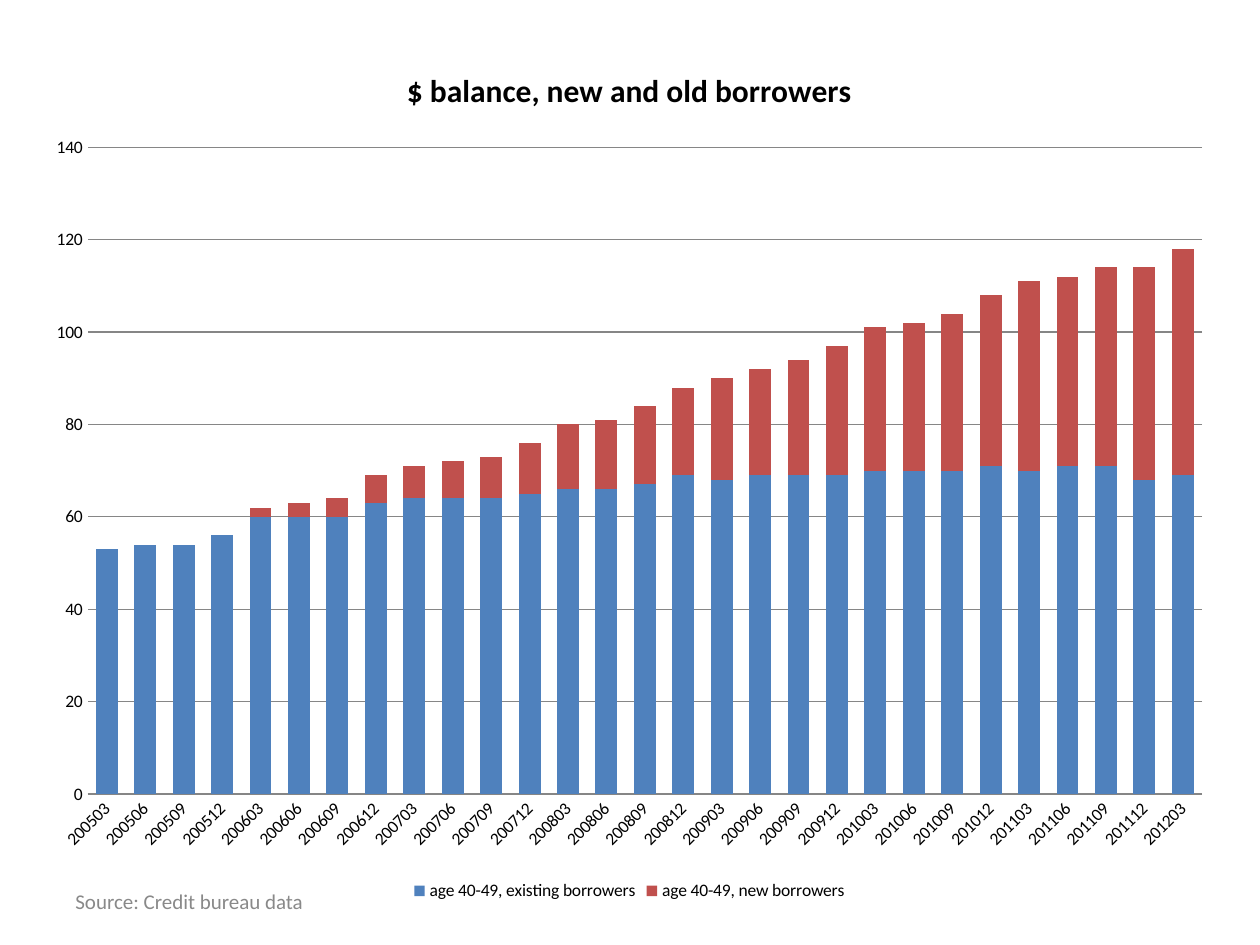
from pptx import Presentation
from pptx.chart import data
from pptx.dml import color
from pptx.enum import chart as ch, text
from pptx.util import Inches, Pt

OLD = [53, 54, 54, 56, 60, 60, 60, 63, 64, 64, 64, 65, 66, 66, 67,
       69, 68, 69, 69, 69, 70, 70, 70, 71, 70, 71, 71, 68, 69]
NEW = [None] * 4 + [2, 3, 4, 6, 7, 8, 9, 11, 14, 15, 17, 19, 22, 23,
                    25, 28, 31, 32, 34, 37, 41, 41, 43, 46, 49]
DATES = [f"{2005 + n // 4}{n % 4 * 3 + 3:02d}" for n in range(len(OLD))]
SERIES = [("age 40-49, existing borrowers", OLD, "4F81BD"),
          ("age 40-49, new borrowers", NEW, "C0504D")]
GREY = "868686"


def rgb(code):
    return color.RGBColor.from_string(code)


def style(font, size, code, bold=False):
    font.name = "Calibri"
    font.size = Pt(size)
    font.bold = bold
    font.color.rgb = rgb(code)


def add_source(slide, left, top, width, height):
    box = slide.shapes.add_textbox(left, top, width, height)
    frame = box.text_frame
    frame.word_wrap = True
    frame.vertical_anchor = text.MSO_ANCHOR.MIDDLE
    frame.text = "Source: Credit bureau data"
    style(frame.paragraphs[0].runs[0].font, 12, "898989")


def add_title(chart):
    chart.has_title = True
    frame = chart.chart_title.text_frame
    frame.text = "$ balance, new and old borrowers"
    style(frame.paragraphs[0].runs[0].font, 18, "000000", True)
    chart.chart_title.include_in_layout = False


def set_axes(chart):
    dates, values = chart.category_axis, chart.value_axis
    for axis in (dates, values):
        axis.major_tick_mark = ch.XL_TICK_MARK.NONE
        axis.minor_tick_mark = ch.XL_TICK_MARK.NONE
    dates.format.line.color.rgb = rgb(GREY)
    values.format.line.fill.background()
    values.minimum_scale = 0
    values.maximum_scale = 140
    values.major_unit = 20
    values.has_major_gridlines = True
    line = values.major_gridlines.format.line
    line.color.rgb = rgb(GREY)
    line.width = Pt(0.75)


def add_bars(slide, left, top, width, height):
    table = data.CategoryChartData(number_format="General")
    table.categories = DATES
    for name, values, _ in SERIES:
        table.add_series(name, values)
    chart = slide.shapes.add_chart(
        ch.XL_CHART_TYPE.COLUMN_STACKED, left, top, width, height, table).chart
    style(chart.font, 10, "000000")
    add_title(chart)
    set_axes(chart)
    chart.has_legend = True
    chart.legend.position = ch.XL_LEGEND_POSITION.BOTTOM
    chart.legend.include_in_layout = False
    plot = chart.plots[0]
    plot.gap_width = 75
    plot.overlap = 100
    plot.vary_by_categories = False
    for bars, (_, _, code) in zip(plot.series, SERIES):
        bars.invert_if_negative = False
        bars.format.fill.solid()
        bars.format.fill.fore_color.rgb = rgb(code)


def main():
    deck = Presentation()
    deck.slide_width, deck.slide_height = Inches(10), Inches(7.5)
    slide = deck.slides.add_slide(deck.slide_layouts[6])
    add_source(slide, Inches(0.5), Inches(6.95), Inches(2.33), Inches(0.4))
    add_bars(slide, Inches(0.26), Inches(0.31), Inches(9.47), Inches(6.88))
    deck.save("out.pptx")


if __name__ == "__main__":
    main()
